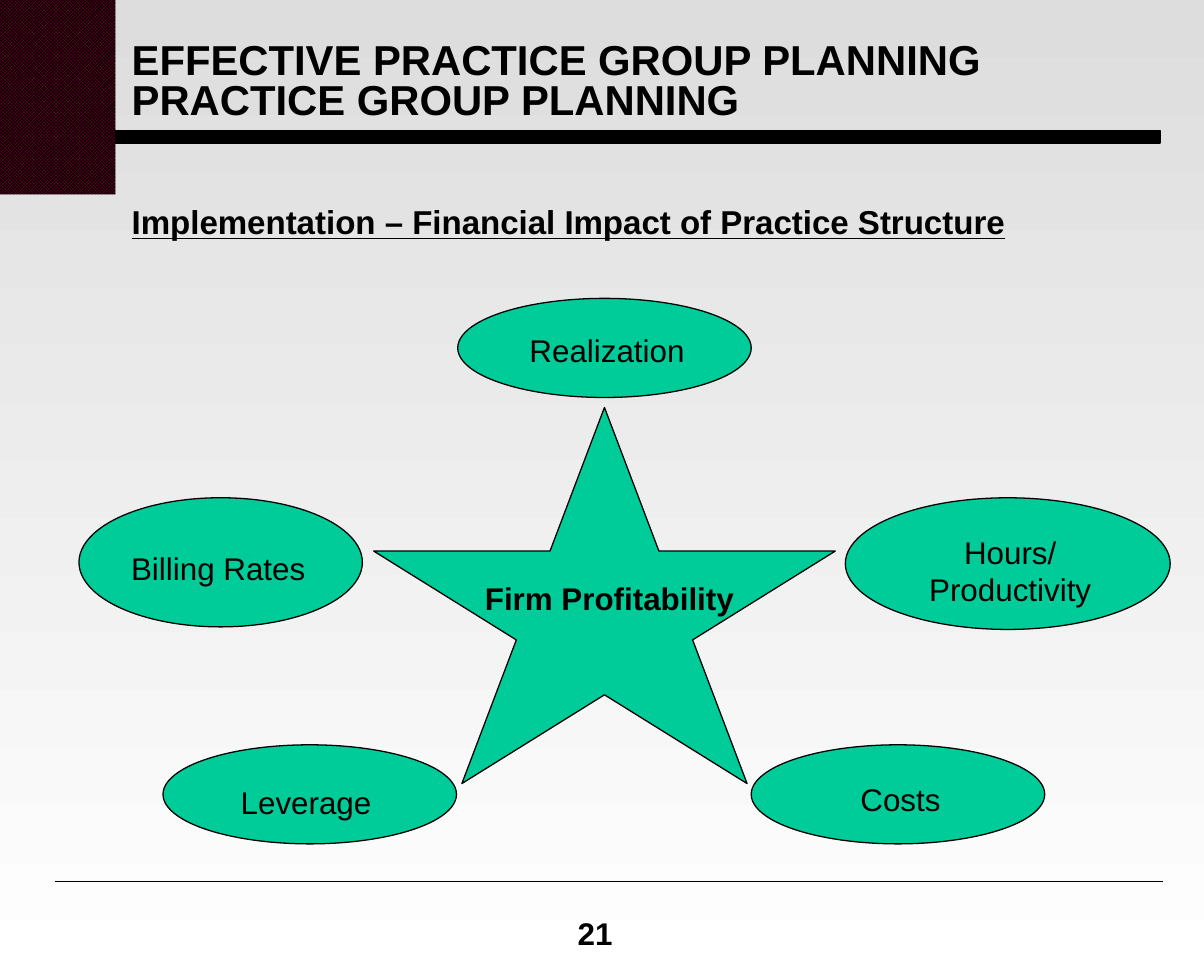
from pptx import Presentation
from pptx.dml.color import RGBColor
from pptx.enum.dml import MSO_PATTERN_TYPE as Pattern
from pptx.enum.shapes import MSO_CONNECTOR_TYPE as Connector, MSO_SHAPE as Shape
from pptx.enum.text import MSO_ANCHOR as Anchor, MSO_AUTO_SIZE as AutoSize, PP_ALIGN as Align
from pptx.util import Emu, Pt
from pptx.oxml.ns import qn
from lxml.etree import SubElement

BLACK = RGBColor(0, 0, 0)
WHITE = RGBColor(255, 255, 255)
GREY = RGBColor(0xDD, 0xDD, 0xDD)
GREEN = RGBColor(0, 0xCC, 0x99)
WINE = RGBColor(0x99, 0, 0x33)
PX = 9144  # EMU; 100 px to the inch


def px(*lengths):
    return [Emu(length * PX) for length in lengths]


def set_all(target, values):
    for name, value in values.items():
        setattr(target, name, value)


class Page:
    font = {"name": "Arial", "size": Pt(18), "bold": False}
    line_width = Pt(0.75)

    def __init__(self, deck):
        self.page = deck.slides.add_slide(deck.slide_layouts[1])
        self.shapes = self.page.shapes

    def background(self, top, bottom):
        fill = self.page.background.fill
        fill.gradient()
        fill.gradient_angle = 270
        for stop, color in zip(fill.gradient_stops, (top, bottom)):
            stop.color.rgb = color

    def put_text(self, box, text, para_format, font):
        para = box.text_frame.paragraphs[0]
        para.text = text
        set_all(para, {"space_before": Pt(0), **para_format})
        set_all(para.font, {**self.font, **font})
        para.font.color.rgb = BLACK

    def placeholder(self, index, place, text, anchor, **font):
        box = self.shapes.placeholders[index]
        set_all(box, dict(zip(("left", "top", "width", "height"), px(*place))))
        set_all(box.text_frame, {"auto_size": AutoSize.NONE, "word_wrap": True,
                                 "vertical_anchor": anchor})
        self.put_text(box, text, {"alignment": Align.LEFT, "line_spacing": 0.8}, font)
        return box

    def title(self, place, text):
        self.placeholder(0, place, text, Anchor.MIDDLE, size=Pt(24), bold=True)

    def heading(self, place, text):
        """Fill the body placeholder with one line that has no bullet."""
        box = self.placeholder(1, place, text, Anchor.TOP,
                               size=Pt(19), bold=True, underline=True)
        layout = box.text_frame.paragraphs[0]._p.get_or_add_pPr()
        layout.set("marL", str(50 * PX))
        layout.set("indent", str(-50 * PX))
        bullet = layout.makeelement(qn("a:buNone"), {})
        layout.insert_element_before(bullet, "a:tabLst", "a:defRPr", "a:extLst")

    def shape(self, kind, place, color):
        shape = self.shapes.add_shape(kind, *px(*place))
        shape.shadow.inherit = False
        shape.fill.solid()
        shape.fill.fore_color.rgb = color
        shape.line.color.rgb = BLACK
        shape.line.width = self.line_width
        return shape

    def checkered(self, place, front, back):
        block = self.shape(Shape.RECTANGLE, place, back)
        block.fill.patterned()
        block.fill.pattern = Pattern.SMALL_CHECKER_BOARD
        block.fill.fore_color.rgb = front
        block.fill.back_color.rgb = back
        block.line.fill.background()

    def rule(self, *ends):
        line = self.shapes.add_connector(Connector.STRAIGHT, *px(*ends))
        line.line.color.rgb = BLACK
        line.line.width = self.line_width
        SubElement(line._element.spPr, qn("a:effectLst"))

    def label(self, place, text, **font):
        box = self.shapes.add_textbox(*px(*place))
        box.text_frame.word_wrap = True
        self.put_text(box, text, {"alignment": Align.CENTER}, font)


# ellipse place, label place, label
FACTORS = [
    ((63, 397, 226, 103), (88, 433, 172, 40), "Billing Rates"),
    ((365, 238, 234, 79), (395, 259, 178, 40), "Realization"),
    ((674, 397, 259, 105), (707, 420, 197, 68), "Hours/ Productivity"),
    ((130, 594, 234, 79), (155, 620, 178, 40), "Leverage"),
    ((599, 594, 234, 79), (629, 617, 178, 40), "Costs"),
]


def main():
    deck = Presentation()
    deck.slide_width, deck.slide_height = px(960, 780)
    page = Page(deck)
    page.background(GREY, WHITE)

    page.shape(Shape.RECTANGLE, (0, 104, 925, 10), BLACK)
    page.checkered((0, 0, 92, 155), WINE, BLACK)
    page.rule(44, 703, 927, 703)
    page.label((433, 724, 83, 40), "21", bold=True)

    page.title((95, 30, 818, 73),
               "EFFECTIVE PRACTICE GROUP PLANNING\vPRACTICE GROUP PLANNING")
    page.heading((95, 162, 822, 515),
                 "Implementation – Financial Impact of Practice Structure")

    page.shape(Shape.STAR_5_POINT, (298, 325, 368, 300), GREEN)
    page.label((373, 457, 226, 40), "Firm Profitability", bold=True)
    for ellipse, place, text in FACTORS:
        page.shape(Shape.OVAL, ellipse, GREEN)
        page.label(place, text)

    deck.save("out.pptx")


if __name__ == "__main__":
    main()
